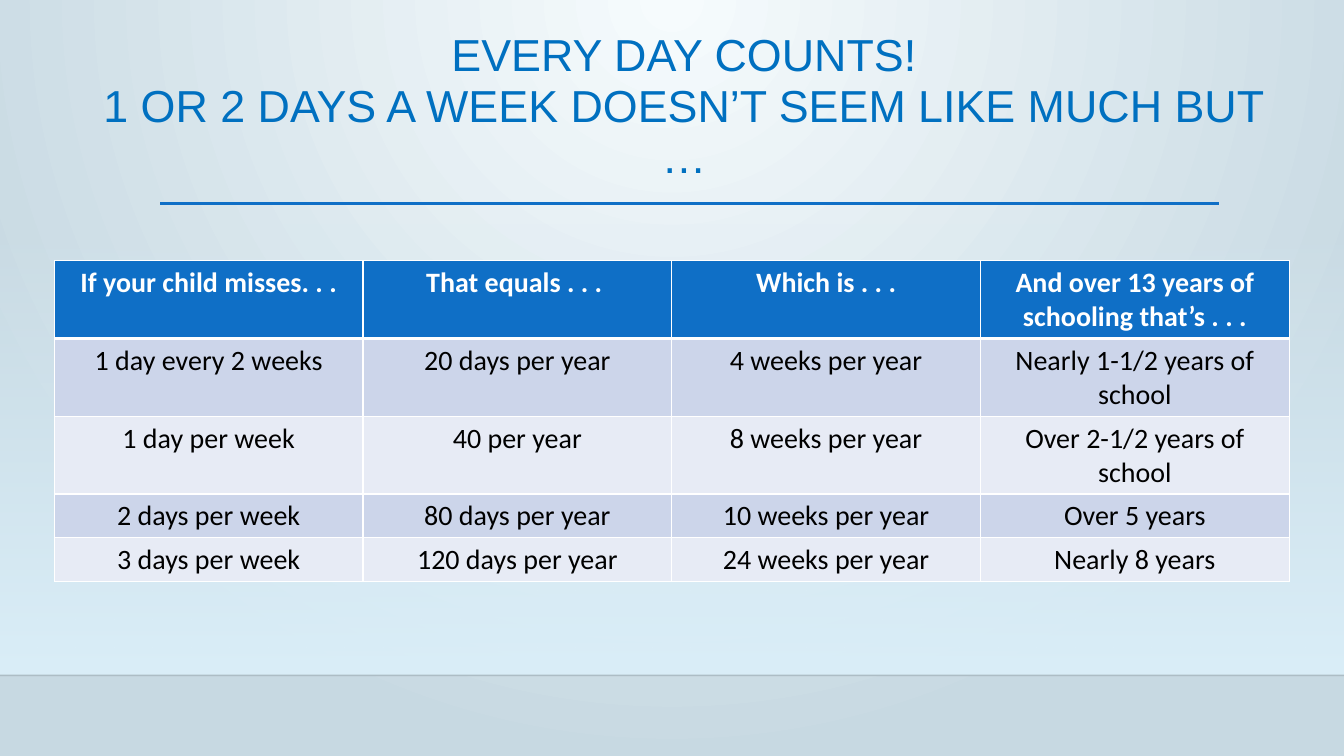
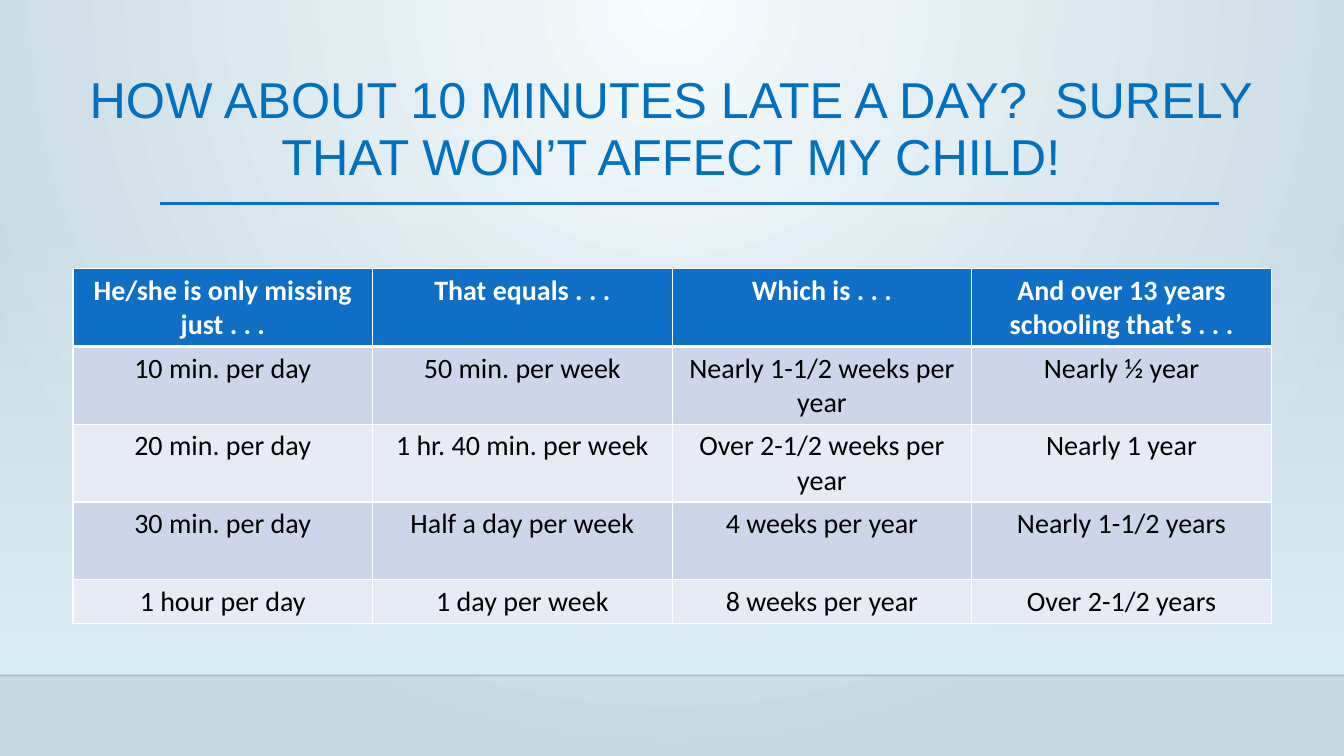
from lxml import etree
from pptx import Presentation
from pptx.dml.color import RGBColor
from pptx.enum.shapes import MSO_CONNECTOR, MSO_SHAPE
from pptx.enum.text import MSO_ANCHOR, PP_ALIGN
from pptx.oxml.ns import qn
from pptx.util import Cm, Pt

rgb = RGBColor.from_string

BLUE, TITLE_BLUE, WHITE, BLACK = "0F6FC6", "0070C0", "FFFFFF", "000000"
ROW_FILLS = ["CCD5EA", "E7EBF5"]
BAND = "DBEFF9"
BACKDROP = ["F6FBFD", "C7D9E2"]
WIDTH, HEIGHT = 33.87, 19.05
FLOOR = 17.02
TALL, LOW = 1.96, 1.1

TITLE_FONT = {"name": "Arial", "bold": False}
HEADER_FONT = {"name": "Calibri", "size": Pt(20), "bold": True}
BODY_FONT = {**HEADER_FONT, "bold": False}

SLIDES = [
    {
        "title": "EVERY DAY COUNTS!\v1 OR 2 DAYS A WEEK DOESN’T SEEM LIKE MUCH BUT …",
        "title_size": 32,
        "title_box": (1.68, 0.64, 31.12, 4.52),
        "table_at": (1.37, 6.57),
        "column_width": 7.78,
        "row_heights": [TALL, TALL, TALL, LOW, LOW],
        "rows": [
            ["If your child misses. . .", "That equals . . . ", "Which is . . .",
             "And over 13 years of schooling that’s . . ."],
            ["1 day every 2 weeks", "20 days per year", "4 weeks per year",
             "Nearly 1-1/2 years of school"],
            ["1 day per week", "40 per year", "8 weeks per year",
             "Over 2-1/2 years of school"],
            ["2 days per week", "80 days per year", "10 weeks per year", "Over 5 years"],
            ["3 days per week", "120 days per year", "24 weeks per year", "Nearly 8 years"],
        ],
    },
    {
        "title": "HOW ABOUT 10 MINUTES LATE A DAY?  SURELY THAT WON’T AFFECT MY CHILD!",
        "title_size": 36,
        "title_box": (0.94, 1.7, 31.95, 4.65),
        "table_at": (1.84, 6.77),
        "column_width": 7.55,
        "row_heights": [TALL, TALL, TALL, TALL, LOW],
        "rows": [
            ["He/she is only missing just . . .", "That equals . . .", "Which is . . .",
             "And over 13 years schooling that’s . . ."],
            ["10 min. per day", "50 min. per week", "Nearly 1-1/2 weeks per year",
             "Nearly ½ year"],
            ["20 min. per day", "1 hr. 40 min. per week", "Over 2-1/2 weeks per year",
             "Nearly 1 year"],
            ["30 min. per day", "Half a day per week", "4 weeks per year",
             "Nearly 1-1/2 years"],
            ["1 hour per day", "1 day per week", "8 weeks per year", "Over 2-1/2 years"],
        ],
    },
]


def fade(shape, percent):
    """Give the first colour of a shape the stated opacity."""
    colour = next(shape._element.iter(qn("a:srgbClr")))
    etree.SubElement(colour, qn("a:alpha"), val=str(percent * 1000))


def add_rule(slide, left, right, top, colour, weight):
    """Draw a horizontal line without a shadow."""
    rule = slide.shapes.add_connector(
        MSO_CONNECTOR.STRAIGHT, Cm(left), Cm(top), Cm(right), Cm(top))
    rule.line.color.rgb = rgb(colour)
    rule.line.width = Pt(weight)
    etree.SubElement(rule._element.spPr, qn("a:effectLst"))
    return rule


presentation = Presentation()
presentation.slide_width = Cm(WIDTH)
presentation.slide_height = Cm(HEIGHT)

# The master carries the glow that spreads from the top centre.
master = presentation.slide_master
backdrop = master.background.fill
backdrop.gradient()
for stop, colour in zip(backdrop.gradient_stops, BACKDROP):
    stop.color.rgb = rgb(colour)
linear = next(master._element.iter(qn("a:lin")))
glow = etree.Element(qn("a:path"), path="circle")
etree.SubElement(glow, qn("a:fillToRect"), l="43000", t="0", r="43000", b="100000")
linear.getparent().replace(linear, glow)

for content in SLIDES:
    slide = presentation.slides.add_slide(presentation.slide_layouts[6])

    band_top = 5.61
    band = slide.shapes.add_shape(
        MSO_SHAPE.RECTANGLE, 0, Cm(band_top), Cm(WIDTH), Cm(FLOOR - band_top))
    band.shadow.inherit = False
    band.line.fill.background()
    band.fill.gradient()
    band.fill.gradient_angle = 270
    for stop in band.fill.gradient_stops:
        stop.color.rgb = rgb(BAND)
    fade(band, 0)

    fade(add_rule(slide, 0, WIDTH, FLOOR, BLACK, 1), 20)
    add_rule(slide, 4.04, 30.71, 5.13, BLUE, 2.5)

    title = slide.shapes.add_textbox(*map(Cm, content["title_box"]))
    title.text_frame.word_wrap = True
    title.text_frame.vertical_anchor = MSO_ANCHOR.TOP
    title.text_frame.text = content["title"]
    paragraph = title.text_frame.paragraphs[0]
    paragraph.alignment = PP_ALIGN.CENTER
    paragraph.line_spacing = 0.95
    for run in paragraph.runs:
        run.font.size = Pt(content["title_size"])
        run.font.color.rgb = rgb(TITLE_BLUE)
        for name, value in TITLE_FONT.items():
            setattr(run.font, name, value)

    rows, heights = content["rows"], content["row_heights"]
    columns = len(rows[0])
    table = slide.shapes.add_table(
        len(rows), columns, *map(Cm, content["table_at"]),
        Cm(columns * content["column_width"]), Cm(sum(heights))).table
    for column in table.columns:
        column.width = Cm(content["column_width"])

    for row_index, texts in enumerate(rows):
        table.rows[row_index].height = Cm(heights[row_index])
        is_header = row_index == 0
        fill = BLUE if is_header else ROW_FILLS[(row_index - 1) % 2]
        font_format = HEADER_FONT if is_header else BODY_FONT
        borders = {"L": 1, "R": 1, "T": 3 if row_index == 1 else 1,
                   "B": 3 if is_header else 1}

        for column_index, text in enumerate(texts):
            cell = table.cell(row_index, column_index)
            properties = cell._tc.get_or_add_tcPr()
            for side, weight in borders.items():
                border = etree.SubElement(properties, qn(f"a:ln{side}"), w=str(Pt(weight)))
                solid = etree.SubElement(border, qn("a:solidFill"))
                etree.SubElement(solid, qn("a:srgbClr"), val=WHITE)
            cell.fill.solid()
            cell.fill.fore_color.rgb = rgb(fill)

            cell.text = text
            paragraph = cell.text_frame.paragraphs[0]
            paragraph.alignment = PP_ALIGN.CENTER
            font = paragraph.runs[0].font
            font.color.rgb = rgb(WHITE if is_header else BLACK)
            for name, value in font_format.items():
                setattr(font, name, value)

presentation.save("out.pptx")
